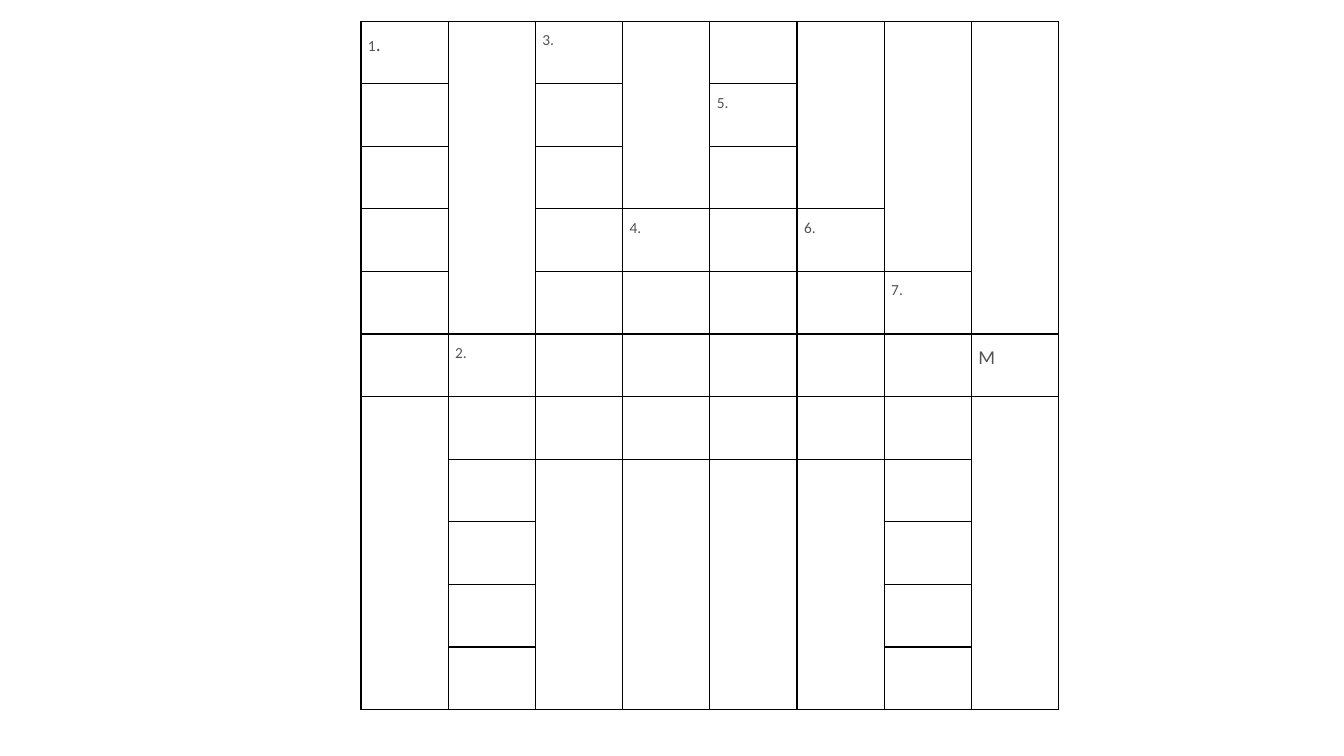
from lxml import etree
from pptx import Presentation
from pptx.dml.color import RGBColor
from pptx.enum import text
from pptx.oxml import ns
from pptx.util import Inches, Pt

ROWS, COLUMNS = 11, 8
WORD_ROWS = [(0, 5), (5, 10), (0, 6), (3, 6), (0, 6), (3, 6), (4, 10), (5, 5)]
LABELS = {
    (0, 0): [("1", 11), (".", 14)],
    (5, 1): [("2.", 11)],
    (0, 2): [("3.", 11)],
    (3, 3): [("4.", 11)],
    (1, 4): [("5.", 11)],
    (3, 5): [("6.", 11)],
    (4, 6): [("7.", 11)],
    (5, 7): [("М", 14)],
}


def color(value):
    return RGBColor.from_string(value)


def add_borders(cell, value, width):
    properties = cell._tc.get_or_add_tcPr()
    for side in ("lnL", "lnR", "lnT", "lnB"):
        line = etree.SubElement(properties, ns.qn(f"a:{side}"), w=str(Pt(width)))
        fill = etree.SubElement(line, ns.qn("a:solidFill"))
        etree.SubElement(fill, ns.qn("a:srgbClr"), val=value)


deck = Presentation()
deck.slide_width, deck.slide_height = Inches(13.33), Inches(7.5)
page = deck.slides.add_slide(deck.slide_layouts[6])
crossword = page.shapes.add_table(
    ROWS, COLUMNS, Inches(3.58), Inches(0.21), Inches(6.92), Inches(6.83)
).table
for flag in ("first_row", "horz_banding"):
    setattr(crossword, flag, False)

for cell in crossword.iter_cells():
    add_borders(cell, "000000", 1)
    cell.fill.background()

for column, (first, last) in enumerate(WORD_ROWS):
    for top, bottom in ((0, first - 1), (last + 1, ROWS - 1)):
        if top < bottom:
            crossword.cell(top, column).merge(crossword.cell(bottom, column))

cell_format = {
    "margin_left": Inches(0.07),
    "margin_right": Inches(0.07),
    "margin_top": 0,
    "margin_bottom": 0,
}
for (row, column), pieces in LABELS.items():
    cell = crossword.cell(row, column)
    for name, value in cell_format.items():
        setattr(cell, name, value)
    para = cell.text_frame.paragraphs[0]
    para.alignment = text.PP_ALIGN.JUSTIFY
    para.line_spacing = 1.5
    for wording, size in pieces:
        span = para.add_run()
        span.text = wording
        span.font.name = "Calibri"
        span.font.size = Pt(size)
        span.font.color.rgb = color("535353")

deck.save("out.pptx")
